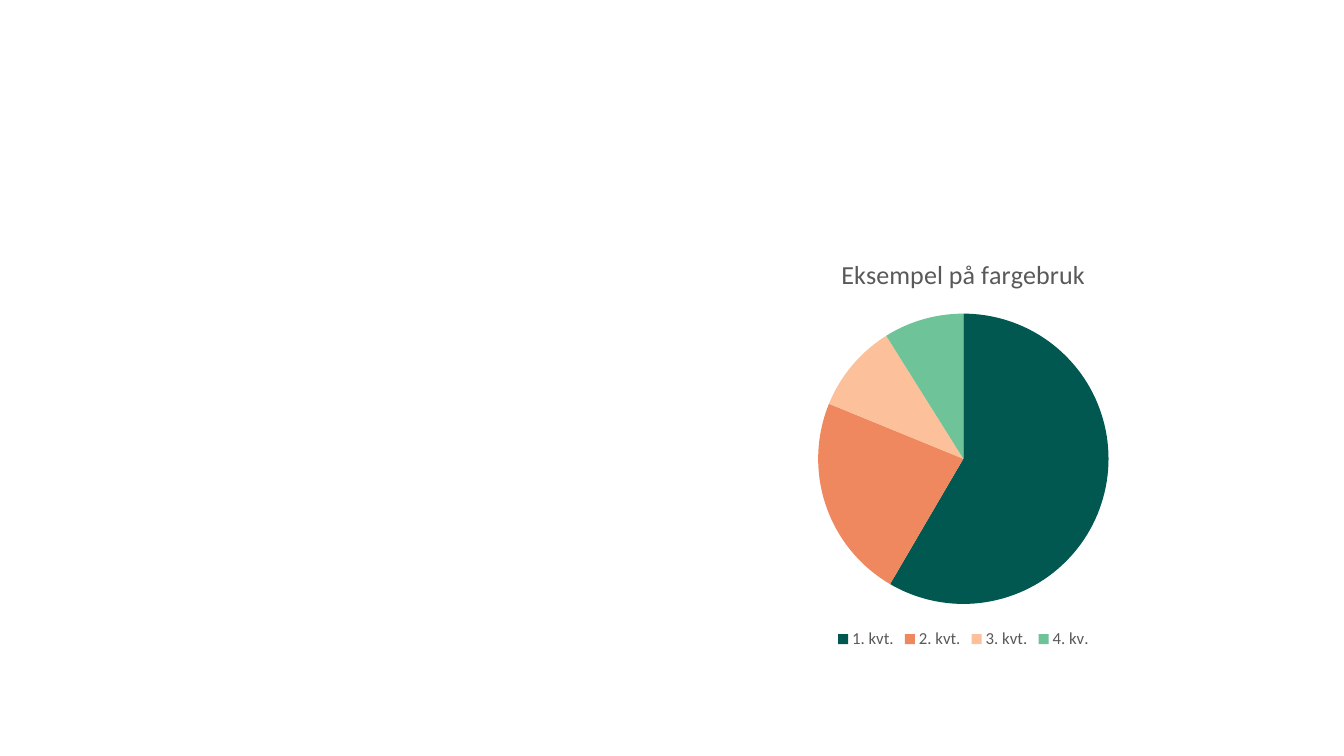
from pptx import Presentation
from pptx.chart.data import CategoryChartData as ChartData
from pptx.dml.color import RGBColor
from pptx.enum.chart import XL_CHART_TYPE as ChartType, XL_LEGEND_POSITION as LegendPosition
from pptx.util import Inches, Pt

GREY = RGBColor(0x59, 0x59, 0x59)
DARK_GREEN = RGBColor(0x00, 0x58, 0x50)
ORANGE = RGBColor(0xF0, 0x88, 0x5F)
PEACH = RGBColor(0xFC, 0xC1, 0x9A)
LIGHT_GREEN = RGBColor(0x6E, 0xC3, 0x98)

QUARTERS = [
    ("1. kvt.", 59, DARK_GREEN),
    ("2. kvt.", 23, ORANGE),
    ("3. kvt.", 10, PEACH),
    ("4. kv.", 9, LIGHT_GREEN),
]


class SlideBuilder:
    """Holds the text style and the current slide."""

    font_name = "Calibri"
    text_color = GREY

    def __init__(self, page):
        self.page = page

    def style(self, font, size):
        font.name = self.font_name
        font.size = Pt(size)
        font.bold = False
        font.color.rgb = self.text_color

    def pie(self, title, slices, left, top, width, height):
        labels, values, colors = zip(*slices)
        data = ChartData()
        data.categories = labels
        data.add_series("Series 1", values)
        frame = self.page.shapes.add_chart(
            ChartType.PIE, Inches(left), Inches(top), Inches(width), Inches(height), data
        )
        chart = frame.chart
        self.style(chart.font, 10)
        chart.has_title = True
        chart.chart_title.include_in_layout = False
        heading = chart.chart_title.text_frame
        heading.text = title
        self.style(heading.paragraphs[0].runs[0].font, 18.6)
        chart.has_legend = True
        chart.legend.position = LegendPosition.BOTTOM
        chart.legend.include_in_layout = False
        self.style(chart.legend.font, 12)
        plot = chart.plots[0]
        plot.vary_by_categories = True
        for index, color in enumerate(colors):
            wedge = plot.series[0].points[index].format
            wedge.fill.solid()
            wedge.fill.fore_color.rgb = color
            wedge.line.fill.background()


def main():
    deck = Presentation()
    deck.slide_width = Inches(13.33)
    deck.slide_height = Inches(7.5)
    builder = SlideBuilder(deck.slides.add_slide(deck.slide_layouts[6]))
    builder.pie("Eksempel på fargebruk", QUARTERS, 7.5, 2.36, 4.11, 4.12)
    deck.save("out.pptx")


if __name__ == "__main__":
    main()
